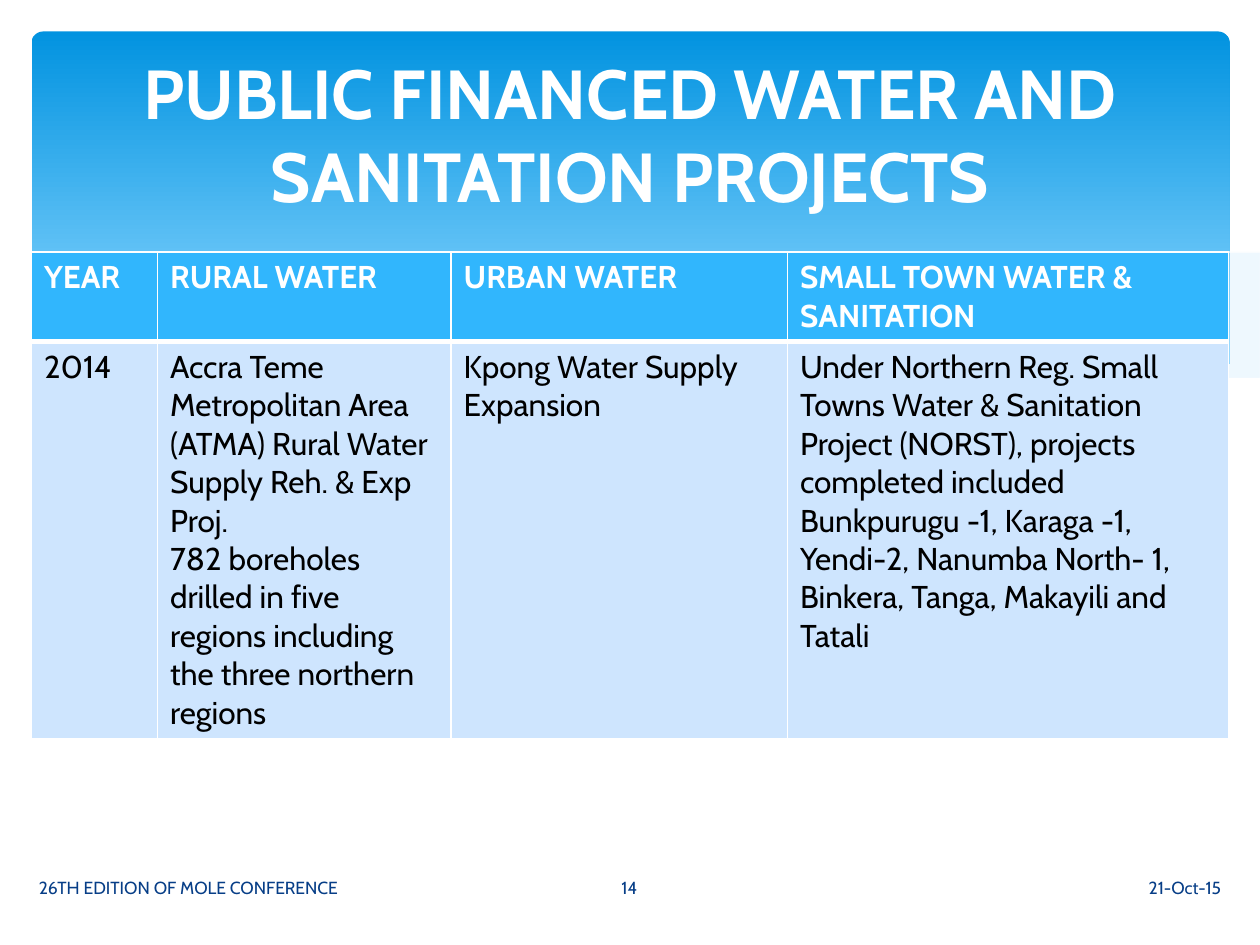
from lxml import etree
from pptx import Presentation
from pptx.dml.color import RGBColor
from pptx.enum.shapes import MSO_SHAPE
from pptx.enum.text import MSO_ANCHOR, MSO_AUTO_SIZE, PP_ALIGN
from pptx.oxml.ns import qn
from pptx.util import Inches, Pt

ROUNDED = MSO_SHAPE.ROUNDED_RECTANGLE
MIDDLE = MSO_ANCHOR.MIDDLE
NO_AUTOFIT = MSO_AUTO_SIZE.NONE
LEFT, CENTER, RIGHT = PP_ALIGN.LEFT, PP_ALIGN.CENTER, PP_ALIGN.RIGHT
FONT = "Cabin"
WHITE = "FFFFFF"
PALE = "C6E7FC"
STEPS = 10


def rgb(value):
    return RGBColor.from_string(value)


def add_text(p, text, size, color, bold=False, align=LEFT):
    p.alignment = align
    r = p.add_run()
    r.text = text
    r.font.name = FONT
    r.font.size = Pt(size)
    r.font.bold = bold
    r.font.color.rgb = rgb(color)


prs = Presentation()
prs.slide_width, prs.slide_height = Inches(10), Inches(7.5)
s = prs.slides.add_slide(prs.slide_layouts[5])

# Gradient banner
banner = s.shapes.add_shape(ROUNDED, Inches(0.25), Inches(0.25), Inches(9.51), Inches(2.7))
banner.adjustments[0] = 0.034
banner.shadow.inherit = False
banner.line.fill.background()
banner.fill.gradient()
banner.fill.gradient_angle = 270
for stop, (position, color) in zip(banner.fill.gradient_stops, [(0, "0293E0"), (0.9, "83D3FE")]):
    stop.position = position
    stop.color.rgb = rgb(color)

# Waves: smooth edges through a few knots, fill colour (None for a line), opacity in percent
waves = [
    ([[(9.76, 2), (8.61, 2.23), (6.61, 2.65)],
      [(6.61, 2.65), (8.03, 2.78), (9.76, 2.47)]], PALE, 29),
    ([[(8.93, 2.73), (6.29, 2.22), (4.42, 1.89), (3.61, 1.85), (2.86, 1.91)],
      [(2.86, 1.91), (4.49, 2.22), (6.5, 2.64), (8.93, 2.73)]], PALE, 40),
    ([[(3.09, 1.95), (4.16, 1.87), (5.82, 2), (7.6, 2.33), (9.07, 2.72)]], None, 100),
    ([[(6.13, 2.57), (8.06, 2.1), (9.75, 1.85)]], None, 100),
    ([[(9.77, 2.46), (8.09, 2.77), (6.26, 2.58), (4.47, 2.2), (2.92, 1.9),
       (1.77, 1.84), (0.95, 1.91), (0.23, 2.13)],
      [(0.23, 3.29), (9.77, 3.29)]], WHITE, 100),
]
for edges, color, opacity in waves:
    points = []
    for knots in edges:
        # Catmull-Rom spline, with the end knots doubled
        padded = [knots[0], *knots, knots[-1]]
        points.append(knots[0])
        for a, b, c, d in zip(padded, padded[1:], padded[2:], padded[3:]):
            for step in range(1, STEPS + 1):
                t = step / STEPS
                points.append(tuple(
                    q + t / 2 * (r - p + t * (2 * p - 5 * q + 4 * r - v
                                              + t * (3 * q - p - 3 * r + v)))
                    for p, q, r, v in zip(a, b, c, d)))
    builder = s.shapes.build_freeform(*points[0], scale=Inches(1))
    builder.add_line_segments(points[1:], close=color is not None)
    wave = builder.convert_to_shape()
    wave.shadow.inherit = False
    if color is None:
        wave.fill.background()
        wave.line.color.rgb = rgb(WHITE)
        wave.line.width = Pt(0)
        continue
    wave.line.fill.background()
    wave.fill.solid()
    wave.fill.fore_color.rgb = rgb(color)
    if opacity < 100:
        clr = wave.element.spPr.find(qn("a:solidFill"))[0]
        etree.SubElement(clr, qn("a:alpha"), val=str(opacity * 1000))

# Projects table
rows = [
    [["YEAR"], ["RURAL WATER"], ["URBAN WATER"], ["SMALL TOWN WATER & SANITATION"]],
    [["2014"],
     ["Accra Teme Metropolitan Area (ATMA) Rural Water Supply Reh. & Exp Proj.",
      "782 boreholes drilled in five regions including the three northern regions"],
     ["Kpong Water Supply Expansion"],
     ["Under Northern Reg. Small Towns Water & Sanitation Project (NORST), projects "
      "completed included Bunkpurugu -1, Karaga -1, Yendi-2, Nanumba North- 1, "
      "Binkera, Tanga, Makayili and Tatali"]],
]
row_styles = [("31B6FD", WHITE, True), ("CEE5FE", "000000", False)]
table = s.shapes.add_table(2, 4, Inches(0.25), Inches(2), Inches(9.5), Inches(3.8)).table
for column, width in zip(table.columns, [1, 2.33, 2.67, 3.5]):
    column.width = Inches(width)
for row, height in zip(table.rows, [0.7, 3.1]):
    row.height = Inches(height)
for i, (texts, (fill, color, bold)) in enumerate(zip(rows, row_styles)):
    for j, paragraphs in enumerate(texts):
        cell = table.cell(i, j)
        cell.fill.solid()
        cell.fill.fore_color.rgb = rgb(fill)
        tf = cell.text_frame
        for k, text in enumerate(paragraphs):
            p = tf.add_paragraph() if k else tf.paragraphs[0]
            add_text(p, text, 18, color, bold)
        # White borders, with a heavy rule between header and body
        heavy = "lnB" if i == 0 else "lnT"
        tcPr = cell._tc.get_or_add_tcPr()
        for n, side in enumerate(["lnL", "lnR", "lnT", "lnB"]):
            ln = etree.Element(qn("a:" + side), w=str(Pt(3 if side == heavy else 1)))
            line_fill = etree.SubElement(ln, qn("a:solidFill"))
            etree.SubElement(line_fill, qn("a:srgbClr"), val=WHITE)
            tcPr.insert(n, ln)

# Footer: date, conference, slide number
for text, left, width, align in [
    ("21-Oct-15", 5.65, 4.14, RIGHT),
    ("26TH EDITION OF MOLE CONFERENCE", 0.21, 4.14, LEFT),
    ("14", 4.36, 1.27, CENTER),
]:
    sp = s.shapes.add_textbox(Inches(left), Inches(6.84), Inches(width), Inches(0.4))
    tf = sp.text_frame
    tf.word_wrap = True
    tf.vertical_anchor = MIDDLE
    add_text(tf.paragraphs[0], text, 10, "073E87", align=align)

# Title, brought in front of the banner
title = s.shapes.title
title.left, title.top = Inches(0.5), Inches(0.37)
title.width, title.height = Inches(9), Inches(1.37)
tf = title.text_frame
tf.auto_size = NO_AUTOFIT
tf.word_wrap = True
tf.vertical_anchor = MIDDLE
add_text(tf.paragraphs[0], "PUBLIC FINANCED WATER AND SANITATION PROJECTS", 39.6, WHITE, True, CENTER)
title.element.getparent().append(title.element)

prs.save("out.pptx")
